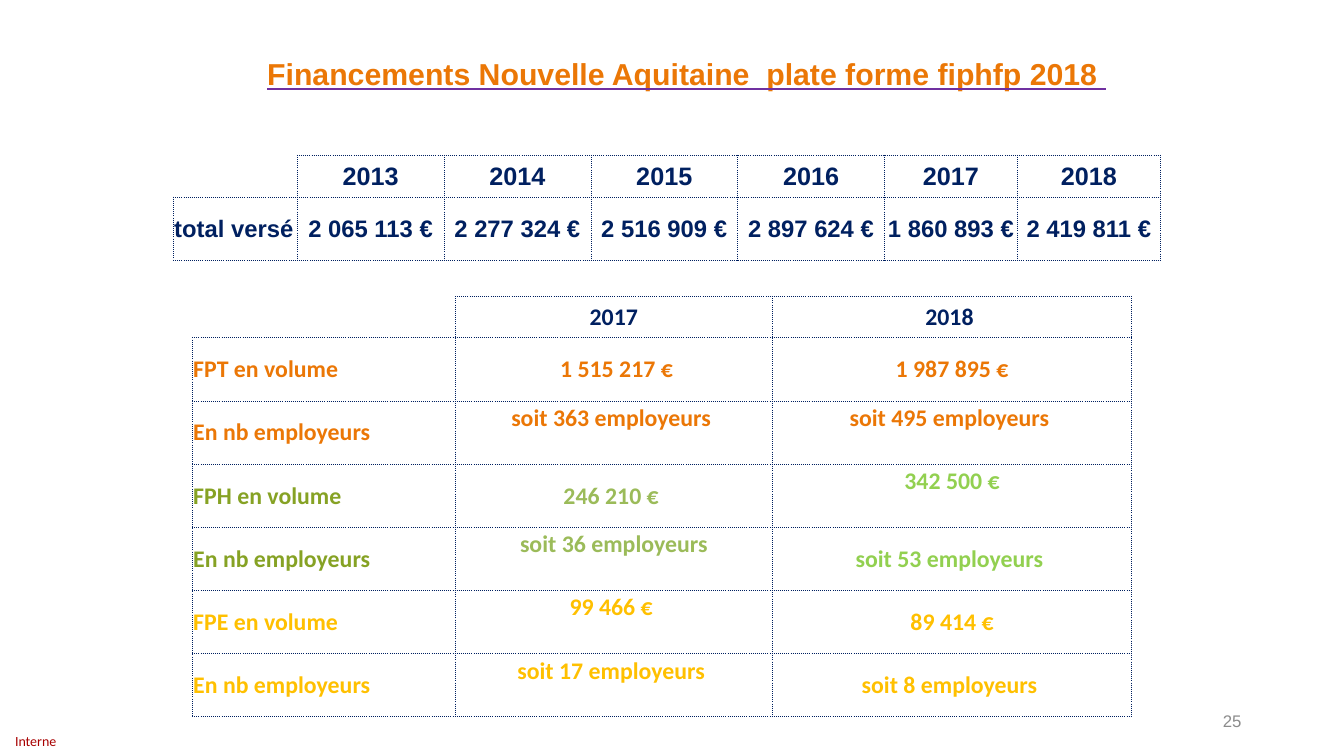
from lxml import etree
from pptx import Presentation
from pptx.dml.color import RGBColor
from pptx.enum.text import MSO_ANCHOR, MSO_AUTO_SIZE, PP_ALIGN
from pptx.oxml import parse_xml
from pptx.oxml.ns import nsdecls, qn
from pptx.util import Cm, Pt

MID = MSO_ANCHOR.MIDDLE
FIXED = MSO_AUTO_SIZE.NONE
LEFT, MIDDLE, RIGHT = PP_ALIGN.LEFT, PP_ALIGN.CENTER, PP_ALIGN.RIGHT

HUES = {
    "navy": "002060", "orange": "EB7706", "purple": "7030A0",
    "olive": "86A224", "sage": "9BBB59", "lime": "92D050",
    "gold": "FFC000", "grey": "8C8C8C", "red": "A80000",
}

TOTALS = [
    ["", "2013", "2014", "2015", "2016", "2017", "2018"],
    ["total versé", "2 065 113 €", "2 277 324 €", "2 516 909 €",
     "2 897 624 €", "1 860 893 € ", "2 419 811 €"],
]
DETAILS = [
    ["", "2017", "2018 "],
    ["FPT en volume", " 1 515 217 €", "1 987 895 €"],
    ["En nb employeurs", "soit 363 employeurs ", "soit 495 employeurs "],
    ["FPH en volume", "246 210 € ", "342 500 €"],
    ["En nb employeurs", "soit 36 employeurs", "soit 53 employeurs "],
    ["FPE en volume", "99 466 € ", "89 414 €"],
    ["En nb employeurs", "soit 17 employeurs ", "soit 8 employeurs "],
]
# Colours of each pair of rows, by column
FPT, FPH, FPE = ["orange"] * 3, ["olive", "sage", "lime"], ["gold"] * 3
TINTS = [["navy"] * 3, FPT, FPT, FPH, FPH, FPE, FPE]
# Cells whose text sits half a line above the middle
RAISED = {(2, 1), (2, 2), (3, 2), (4, 1), (5, 1), (6, 1)}


def style(para, font, size, hue, bold=False, align=LEFT):
    para.alignment = align
    for run in para.runs:
        run.font.name = font
        run.font.size = Pt(size)
        run.font.bold = bold
        run.font.color.rgb = RGBColor.from_string(HUES[hue])


def add_title(slide, text):
    title = slide.shapes.title
    title.left, title.top = Cm(6.48), Cm(0.97)
    title.width, title.height = Cm(23.42), Cm(1.9)
    frame = title.text_frame
    frame.text = text
    frame.auto_size = FIXED
    frame.vertical_anchor = MID
    para = frame.paragraphs[0]
    para.line_spacing = 0.9
    style(para, "Arial", 21.6, "orange", True)
    # Underline in its own colour
    font = para.runs[0].font
    font.underline = True
    line = parse_xml(
        f'<a:uFill {nsdecls("a")}><a:solidFill><a:srgbClr val="{HUES["purple"]}"/>'
        '</a:solidFill></a:uFill>')
    para.runs[0]._r.rPr.find(qn("a:latin")).addprevious(line)


def add_label(slide, text, box, look, inset=None):
    frame = slide.shapes.add_textbox(*map(Cm, box)).text_frame
    frame.text = text
    frame.word_wrap = True
    frame.vertical_anchor = MID
    if inset is not None:
        frame.margin_left = frame.margin_right = Cm(inset)
        frame.margin_top = frame.margin_bottom = Cm(inset)
    style(frame.paragraphs[0], *look)


def add_edges(cell, sides):
    props = cell._tc.get_or_add_tcPr()
    for spot, side in enumerate(sides):
        edge = etree.Element(qn(f"a:ln{side}"), w=str(Pt(0.5)))
        fill = etree.SubElement(edge, qn("a:solidFill"))
        etree.SubElement(fill, qn("a:srgbClr"), val=HUES["navy"])
        etree.SubElement(edge, qn("a:prstDash"), val="sysDot")
        props.insert(spot, edge)


def add_grid(slide, data, spot, widths, heights):
    shape = slide.shapes.add_table(
        len(data), len(widths), *map(Cm, spot), Cm(sum(widths)), Cm(sum(heights)))
    table = shape.table
    table.first_row = table.horz_banding = False
    for col, width in zip(table.columns, widths):
        col.width = Cm(width)
    for row, height in zip(table.rows, heights):
        row.height = Cm(height)
    for r, texts in enumerate(data):
        for c, text in enumerate(texts):
            cell = table.cell(r, c)
            cell.text = text
            cell.fill.background()
            cell.vertical_anchor = MID
            cell.margin_left = cell.margin_right = cell.margin_top = Cm(0.02)
            cell.margin_bottom = Cm(0)
            add_edges(cell, "LRTB" if text else "RB")
    return table


def style_grid(table, data, font, size, head, tints):
    for r, texts in enumerate(data):
        for c in range(len(texts)):
            para = table.cell(r, c).text_frame.paragraphs[0]
            style(para, font, size if r else head, tints[r][c], True,
                  MIDDLE if c else LEFT)


def main():
    prs = Presentation()
    prs.slide_width, prs.slide_height = Cm(33.87), Cm(19.05)
    slide = prs.slides.add_slide(prs.slide_layouts[5])

    # Title and footer
    add_label(slide, "Interne", (0, 18.31, 1.8, 0.74), ("Calibri", 10, "red"), 0)
    slide.shapes[-1].text_frame.margin_left = Cm(0.38)
    slide.shapes[-1].text_frame.word_wrap = False
    add_title(slide, "Financements Nouvelle Aquitaine  plate forme fiphfp 2018 ")
    add_label(slide, "25", (23.92, 17.65, 7.62, 1.01),
              ("Arial", 12, "grey", False, RIGHT))

    # Totals by year
    sums = add_grid(slide, TOTALS, (4.37, 3.91),
                    [3.12] + [3.7] * 4 + [3.35, 3.6], [1.05, 1.6])
    style_grid(sums, TOTALS, "Arial", 17, 18, [["navy"] * 7] * 2)

    # Amounts and employers by branch
    parts = add_grid(slide, DETAILS, (4.85, 7.47),
                     [6.62, 8, 9.05], [1.04] + [1.59] * 6)
    style_grid(parts, DETAILS, "Calibri", 17, 17, TINTS)
    for r, c in RAISED:
        parts.cell(r, c).margin_bottom = Cm(0.72)

    prs.save("out.pptx")


if __name__ == "__main__":
    main()
